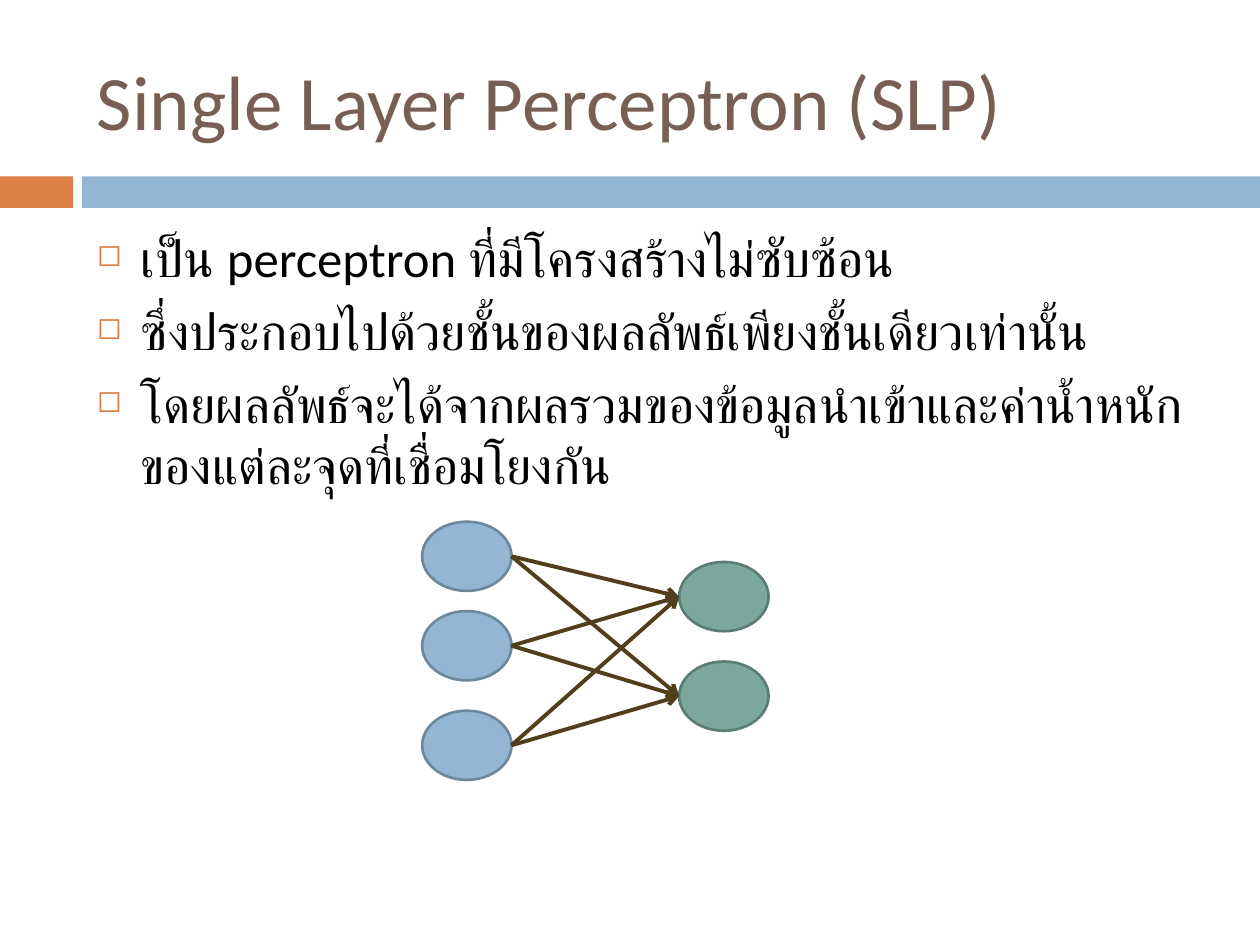
from itertools import product

from lxml import etree
from pptx import Presentation
from pptx.dml.color import RGBColor
from pptx.enum.shapes import MSO_CONNECTOR, MSO_SHAPE
from pptx.enum.text import MSO_ANCHOR
from pptx.oxml.ns import qn
from pptx.util import Inches, Pt

RECTANGLE, OVAL = MSO_SHAPE.RECTANGLE, MSO_SHAPE.OVAL
STRAIGHT = MSO_CONNECTOR.STRAIGHT
MIDDLE, TOP = MSO_ANCHOR.MIDDLE, MSO_ANCHOR.TOP

ORANGE = RGBColor(0xDD, 0x80, 0x47)
BLUE = RGBColor(0x94, 0xB6, 0xD2)
BLUE_EDGE = RGBColor(0x6D, 0x87, 0x9B)
GREEN = RGBColor(0x7B, 0xA7, 0x9D)
GREEN_EDGE = RGBColor(0x5B, 0x7C, 0x74)
BROWN = RGBColor(0x77, 0x5F, 0x55)
DARK_BROWN = RGBColor(0x51, 0x3E, 0x1B)
BLACK = RGBColor(0, 0, 0)

FONT = "Calibri"
SLIDE_W, SLIDE_H = 10, 7.5
MARGIN, TEXT_W = 0.67, 8.92
NODE_W, NODE_H = 0.71, 0.55

TITLE = "Single Layer Perceptron (SLP)"
POINTS = [
    "เป็น perceptron ที่มีโครงสร้างไม่ซับซ้อน",
    "ซึ่งประกอบไปด้วยชั้นของผลลัพธ์เพียงชั้นเดียวเท่านั้น",
    "โดยผลลัพธ์จะได้จากผลรวมของข้อมูลนำเข้าและค่าน้ำหนักของแต่ละจุดที่เชื่อมโยงกัน",
]


def add_filled(slide, kind, box, fill, edge=None):
    shape = slide.shapes.add_shape(kind, *map(Inches, box))
    shape.shadow.inherit = False
    shape.fill.solid()
    shape.fill.fore_color.rgb = fill
    if edge is None:
        shape.line.fill.background()
    else:
        shape.line.color.rgb = edge
        shape.line.width = Pt(1.5)


def add_text(slide, box, lines, size, color, anchor):
    frame = slide.shapes.add_textbox(*map(Inches, box)).text_frame
    frame.word_wrap = True
    frame.vertical_anchor = anchor
    frame.text = "\n".join(lines)
    for paragraph in frame.paragraphs:
        paragraph.font.name = FONT
        paragraph.font.size = Pt(size)
        paragraph.font.color.rgb = color
    return frame.paragraphs


def add_bullet(paragraph):
    """Hang an orange square in front of the paragraph."""
    paragraph.space_before = Pt(7)
    props = paragraph._p.get_or_add_pPr()
    props.set("marL", str(Inches(0.35)))
    props.set("indent", str(-Inches(0.35)))
    bullet_color = etree.Element(qn("a:buClr"))
    etree.SubElement(bullet_color, qn("a:srgbClr"), val=str(ORANGE))
    bullet_size = etree.Element(qn("a:buSzPct"), val="60000")
    bullet_char = etree.Element(qn("a:buChar"), char="◻")
    # Bullet settings stand before the default run properties
    for part in (bullet_color, bullet_size, bullet_char):
        props.find(qn("a:defRPr")).addprevious(part)


def add_arrow(slide, start, end):
    arrow = slide.shapes.add_connector(STRAIGHT, *map(Inches, start + end))
    arrow.line.color.rgb = DARK_BROWN
    arrow.line.width = Pt(2.25)
    etree.SubElement(arrow.line._get_or_add_ln(), qn("a:tailEnd"), type="arrow")
    etree.SubElement(arrow._element.spPr, qn("a:effectLst"))


def add_band(slide, top, height):
    tab_w, gap = 0.58, 0.07
    bar_left = tab_w + gap
    add_filled(slide, RECTANGLE, (0, top, tab_w, height), ORANGE)
    add_filled(slide, RECTANGLE, (bar_left, top, SLIDE_W - bar_left, height), BLUE)


def add_points(slide, box):
    for paragraph in add_text(slide, box, POINTS, 29, BLACK, TOP):
        add_bullet(paragraph)


def add_network(slide, left, top, width):
    """Join every input node to every output node."""
    output_left = left + width - NODE_W
    input_tops = [top + offset for offset in (0, 0.71, 1.5)]
    output_tops = [top + offset for offset in (0.32, 1.11)]
    layers = ((left, input_tops, BLUE, BLUE_EDGE),
              (output_left, output_tops, GREEN, GREEN_EDGE))
    for node_left, node_tops, fill, edge in layers:
        for node_top in node_tops:
            add_filled(slide, OVAL, (node_left, node_top, NODE_W, NODE_H), fill, edge)
    for output_top, input_top in product(output_tops, input_tops):
        add_arrow(slide, (left + NODE_W, input_top + NODE_H / 2),
                  (output_left, output_top + NODE_H / 2))


def main():
    deck = Presentation()
    deck.slide_width, deck.slide_height = Inches(SLIDE_W), Inches(SLIDE_H)
    slide = deck.slides.add_slide(deck.slide_layouts[6])
    add_band(slide, top=1.4, height=0.25)
    add_text(slide, (MARGIN, 0.25, TEXT_W, 1.08), [TITLE], 44, BROWN, MIDDLE)
    add_points(slide, (MARGIN, 1.75, TEXT_W, 4.92))
    add_network(slide, left=3.35, top=4.14, width=2.75)
    deck.save("out.pptx")


if __name__ == "__main__":
    main()
